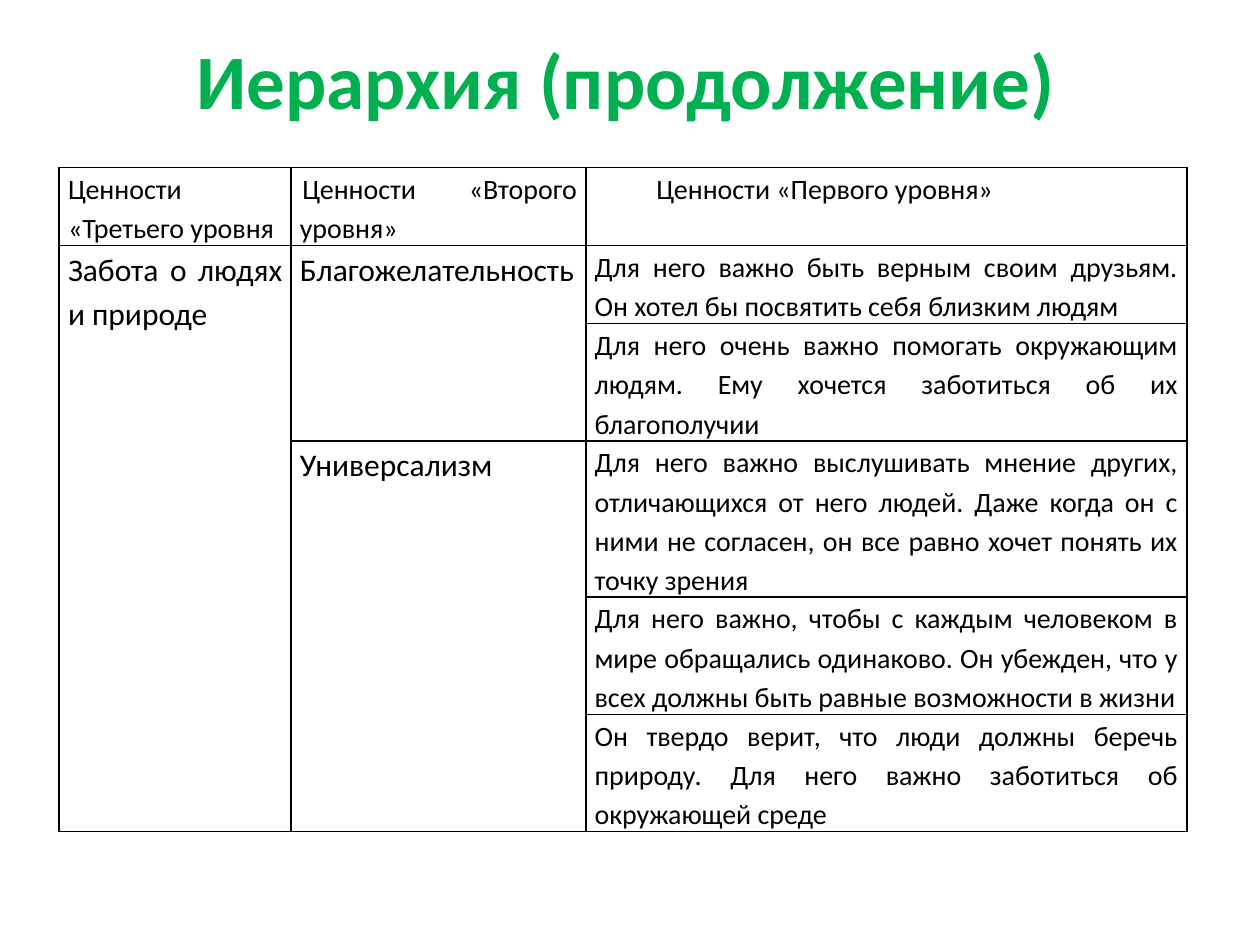
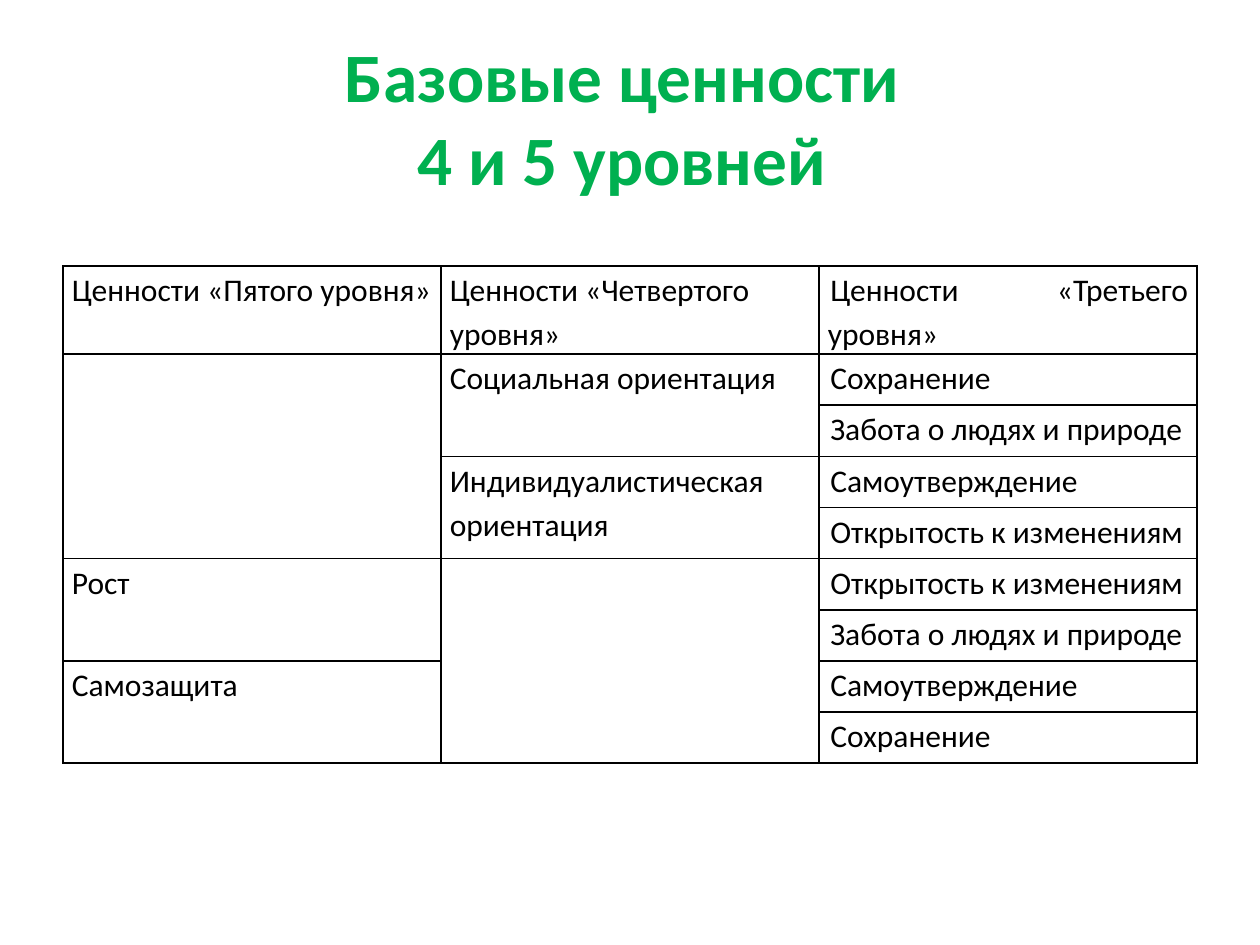
import pptx
import pptx.util
import pptx.dml.color
import pptx.enum.text
from lxml import etree

COLORS = {"title": "00B050", "text": "000000", "border": "000000"}
FONT = "Calibri"
WIDTH, HEIGHT = 10, 7.5
TITLE_SIZE = (9, 1.25)
LINE_SPACING = 1.15
CELL_MARGIN = 0.07
SLIGHT = 0.02
LINE_16 = 0.31
LEVEL_HEAD = 0.7
LEVEL_ROW = (3.95 - LEVEL_HEAD) / 8

JUSTIFY = {"align": "JUSTIFY"}
SMALL = {**JUSTIFY, "size": 16}
INDENTED = {"indent": SLIGHT}

SLIDES = [
    {
        "title": "Иерархия (продолжение)",
        "title_at": (0.47, 0),
        "title_pt": 44,
        "table_at": (0.47, 1.33),
        "widths": [1.84, 2.34, 4.77],
        "heights": [LINE_16 * lines for lines in (2, 2, 3, 4, 3, 3)],
        "columns": [
            [("Ценности «Третьего уровня", 1, SMALL),
             ("Забота о людях и природе ", 5, JUSTIFY)],
            [("Ценности «Второго уровня»", 1, {**SMALL, "indent": SLIGHT}),
             ("Благожелательность", 2, JUSTIFY),
             ("Универсализм", 3, JUSTIFY)],
            [("Ценности «Первого уровня»", 1, {**SMALL, "indent": 0.49}),
             ("Для него важно быть верным своим друзьям. Он хотел бы "
              "посвятить себя близким людям", 1, SMALL),
             ("Для него очень важно помогать окружающим людям. Ему хочется "
              "заботиться об их благополучии ", 1, SMALL),
             ("Для него важно выслушивать мнение других, отличающихся от него "
              "людей. Даже когда он с ними не согласен, он все равно хочет "
              "понять их точку зрения", 1, SMALL),
             ("Для него важно, чтобы с каждым человеком в мире обращались "
              "одинаково. Он убежден, что у всех должны быть равные "
              "возможности в жизни", 1, SMALL),
             ("Он твердо верит, что люди должны беречь природу. Для него "
              "важно заботиться об окружающей среде", 1, SMALL)],
        ],
    },
    {
        "title": "Базовые ценности \n4 и 5 уровней ",
        "title_at": (0.5, 0.3),
        "title_pt": 39.6,
        "table_at": (0.5, 2.11),
        "widths": [3] * 3,
        "heights": [LEVEL_HEAD] + [LEVEL_ROW] * 8,
        "columns": [
            [("Ценности «Пятого уровня»", 1, {}), ("", 4, {}),
             ("Рост", 2, {}), ("Самозащита", 2, {})],
            [("Ценности «Четвертого уровня»", 1, {}),
             ("Социальная ориентация", 2, {}),
             ("Индивидуалистическая ориентация", 2, {}), ("", 4, {})],
            [("Ценности «Третьего уровня»", 1, {**JUSTIFY, **INDENTED})] + [
                (value, 1, INDENTED) for value in (
                    "Сохранение", "Забота о людях и природе",
                    "Самоутверждение", "Открытость к изменениям",
                    "Открытость к изменениям", "Забота о людях и природе",
                    "Самоутверждение", "Сохранение")],
        ],
    },
]


def inches(*lengths):
    return [pptx.util.Inches(length) for length in lengths]


def write(tf, text, size=18, color="text", bold=False, align="LEFT",
          indent=0, spacing=None):
    p = tf.paragraphs[0]
    p.alignment = getattr(pptx.enum.text.PP_ALIGN, align)
    p.line_spacing = spacing
    if indent:
        p._p.get_or_add_pPr().set("indent", str(pptx.util.Inches(indent)))
    for i, line in enumerate(text.split("\n")):
        if i:
            p.add_line_break()
        r = p.add_run()
        r.text = line
        r.font.name = FONT
        r.font.size = pptx.util.Pt(size)
        r.font.bold = bold
        r.font.color.rgb = pptx.dml.color.RGBColor.from_string(COLORS[color])


def style_cell(cell):
    cell.margin_left = cell.margin_right = pptx.util.Inches(CELL_MARGIN)
    cell.margin_top = cell.margin_bottom = 0
    tc_pr = cell._tc.get_or_add_tcPr()
    ns = "{" + tc_pr.nsmap["a"] + "}"
    for side in "LRTB":
        ln = etree.SubElement(tc_pr, f"{ns}ln{side}", w=str(pptx.util.Pt(1)))
        fill = etree.SubElement(ln, f"{ns}solidFill")
        etree.SubElement(fill, f"{ns}srgbClr", val=COLORS["border"])
    cell.fill.background()


def add_title(s, text, at, size):
    tf = s.shapes.add_textbox(*inches(*at, *TITLE_SIZE)).text_frame
    tf.word_wrap = True
    tf.vertical_anchor = pptx.enum.text.MSO_ANCHOR.MIDDLE
    write(tf, text, size=size, color="title", bold=True, align="CENTER")


def add_values_table(s, at, widths, heights, columns):
    table = s.shapes.add_table(
        len(heights), len(widths),
        *inches(*at, sum(widths), sum(heights))).table
    table.first_row = table.horz_banding = False
    for column, width in zip(table.columns, widths):
        column.width = pptx.util.Inches(width)
    for row, height in zip(table.rows, heights):
        row.height = pptx.util.Inches(height)
    for cell in table.iter_cells():
        style_cell(cell)
    for col, entries in enumerate(columns):
        row = 0
        for text, span, style in entries:
            cell = table.cell(row, col)
            if span > 1:
                cell.merge(table.cell(row + span - 1, col))
            if text:
                write(cell.text_frame, text, spacing=LINE_SPACING, **style)
            row += span


def main():
    prs = pptx.Presentation()
    prs.slide_width, prs.slide_height = inches(WIDTH, HEIGHT)
    for content in SLIDES:
        s = prs.slides.add_slide(prs.slide_layouts[6])
        add_title(s, content["title"], content["title_at"],
                  content["title_pt"])
        add_values_table(s, content["table_at"], content["widths"],
                         content["heights"], content["columns"])
    prs.save("out.pptx")


if __name__ == "__main__":
    main()
